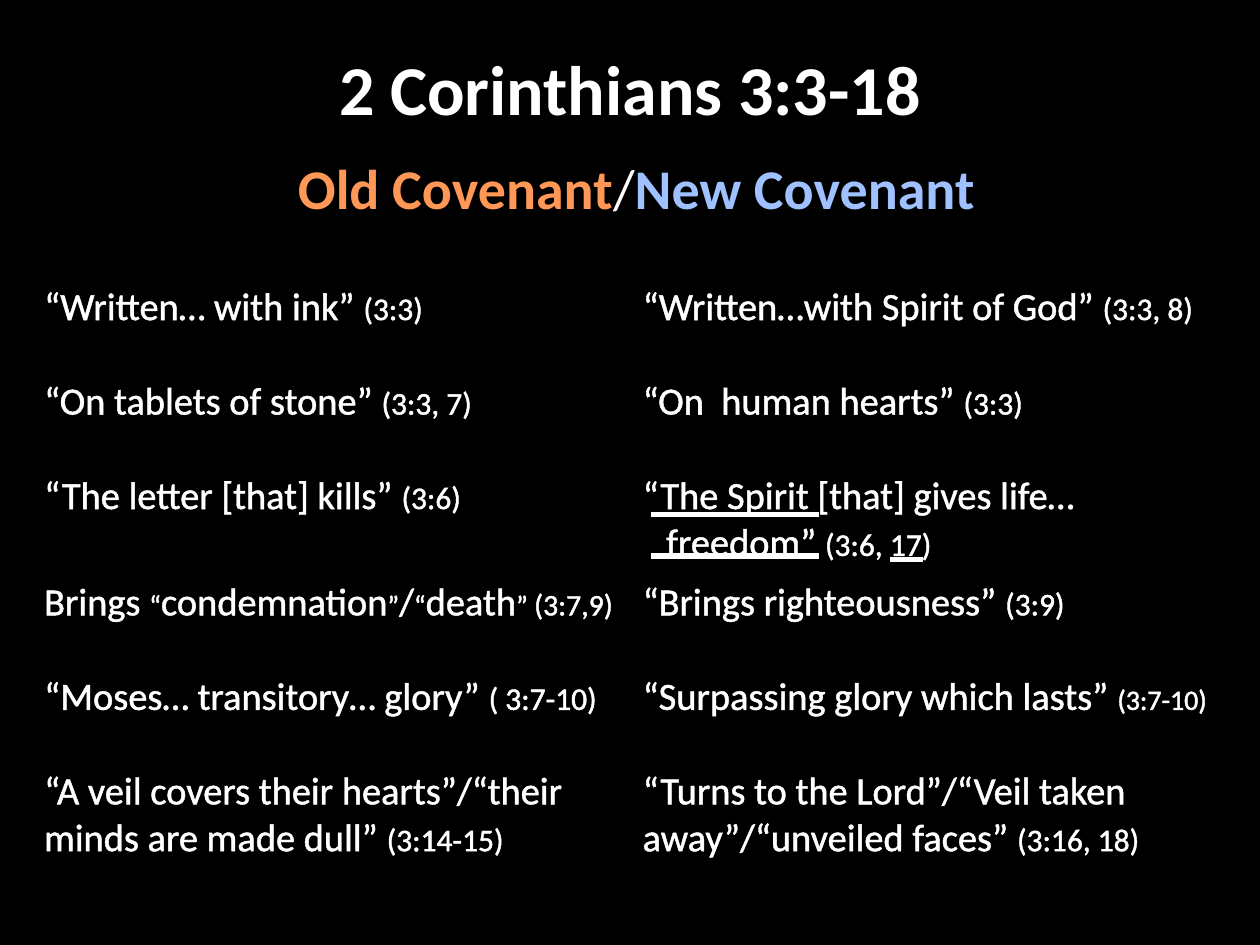
from dataclasses import dataclass

from lxml.etree import SubElement
from pptx import Presentation
from pptx.dml.color import RGBColor
from pptx.enum.shapes import MSO_CONNECTOR
from pptx.enum.text import MSO_ANCHOR, PP_ALIGN
from pptx.oxml import parse_xml
from pptx.oxml.ns import nsdecls, qn
from pptx.util import Pt


@dataclass(frozen=True)
class Theme:
    font: str = "Calibri"
    background: str = "000000"
    text: str = "FFFFFF"
    old: tuple = ((0, "9D4700"), (78, "FF9856"), (100, "FFF5F1"))
    new: tuple = ((0, "BFD3F9"), (9, "A0C1FF"), (50, "003D85"),
                  (79, "A0C1FF"), (100, "BFD3F9"))
    new_outline: str = "467AB8"
    title: int = 40
    subtitle: int = 32
    quote: int = 22
    verse: int = 18
    tight_verse: int = 17
    small: int = 16


THEME = Theme()
NO_GRID_STYLE = "{2D5ABB26-0587-4C30-8999-92F81FD0307C}"
HANGING = 13.5

# Each cell: hanging indent, then runs of text, size and optional underline
Q, V, S = THEME.quote, THEME.verse, THEME.small
ROWS = [
    ((True, [("“Written… with ink” ", Q), ("(3:3)", V)]),
     (True, [("“Written…with Spirit of God” ", Q), ("(3:3, 8)", V)])),
    ((True, [("“On tablets of stone” ", Q), ("(3:3, 7)", V)]),
     (True, [("“On  human hearts” ", Q), ("(3:3)", V)])),
    ((True, [("“The letter [that] kills” ", Q), ("(3:6)", V)]),
     (True, [("“The Spirit [that] gives life… freedom” ", Q),
             ("(3:6, ", V), ("17", V, True), (")", V)])),
    ((False, [("Brings ", Q), ("“", S), ("condemnation", Q), ("”", S), ("/", Q),
              ("“", S), ("death", Q), ("” ", S), ("(3:7,9)", THEME.tight_verse)]),
     (False, [("“Brings righteousness” ", Q), ("(3:9)", V)])),
    ((True, [("“Moses… transitory… glory” ", Q), ("( 3:7-10)", V)]),
     (True, [("“Surpassing glory which lasts” ", Q), ("(3:7-10)", S)])),
    ((False, [("“A veil covers their hearts”/“their minds are made dull” ", Q),
              ("(3:14-15)", V)]),
     (False, [("“Turns to the Lord”/“Veil taken away”/“unveiled faces” ", Q),
              ("(3:16, 18)", V)])),
]


def add_text(paragraph, text, *, size, color=THEME.text, bold=False,
             underline=False, gradient=None, outline=None, outline_width=0.75):
    """Add one formatted run to a paragraph."""
    run = paragraph.add_run()
    run.text = text
    font = run.font
    font.name, font.size, font.bold = THEME.font, Pt(size), bold
    if underline:
        font.underline = True
    properties = font._element
    if gradient:
        stops = "".join(
            f'<a:gs pos="{position * 1000}"><a:srgbClr val="{stop}"/></a:gs>'
            for position, stop in gradient)
        properties.insert(0, parse_xml(
            f'<a:gradFill {nsdecls("a")}><a:gsLst>{stops}</a:gsLst>'
            '<a:lin ang="5400000"/></a:gradFill>'))
    else:
        font.color.rgb = RGBColor.from_string(color)
    if outline:
        properties.insert(0, parse_xml(
            f'<a:ln {nsdecls("a")} w="{Pt(outline_width)}"><a:solidFill>'
            f'<a:srgbClr val="{outline}"/></a:solidFill></a:ln>'))


def place_title(slide, left, top, width, height):
    title = slide.shapes.title
    title.left, title.top, title.width, title.height = map(
        Pt, (left, top, width, height))
    frame = title.text_frame
    frame.margin_left = frame.margin_right = frame.margin_bottom = 0
    frame.margin_top = Pt(2)
    frame.vertical_anchor = MSO_ANCHOR.TOP
    paragraph = frame.paragraphs[0]
    paragraph.alignment = PP_ALIGN.CENTER
    add_text(paragraph, "2 Corinthians 3:3-18", size=THEME.title, bold=True)


def place_subtitle(slide, left, top, width, height):
    box = slide.shapes.add_textbox(*map(Pt, (left, top, width, height)))
    box.text_frame.word_wrap = True
    paragraph = box.text_frame.paragraphs[0]
    paragraph.alignment = PP_ALIGN.CENTER
    size = THEME.subtitle
    add_text(paragraph, " Old Covenant", size=size, bold=True, gradient=THEME.old)
    add_text(paragraph, "/", size=size)
    add_text(paragraph, "New Covenant", size=size, bold=True, gradient=THEME.new,
             outline=THEME.new_outline, outline_width=0.83)


def fill_cell(cell, hanging, runs):
    cell.fill.background()
    paragraph = cell.text_frame.paragraphs[0]
    if hanging:
        properties = paragraph._p.get_or_add_pPr()
        properties.set("marL", str(Pt(HANGING)))
        properties.set("indent", str(Pt(-HANGING)))
    for text, size, *underline in runs:
        add_text(paragraph, text, size=size, underline=bool(underline),
                 outline=THEME.text)


def place_comparison(slide, left, top, width, height, row_height):
    shape = slide.shapes.add_table(
        len(ROWS), 2, *map(Pt, (left, top, width, height)))
    table = shape.table
    table.first_row = table.horz_banding = False
    table._tbl.tblPr.find(qn("a:tableStyleId")).text = NO_GRID_STYLE
    for row, contents in zip(table.rows, ROWS):
        row.height = Pt(row_height)
        for cell, (hanging, runs) in zip(row.cells, contents):
            fill_cell(cell, hanging, runs)


def place_underlines(slide, left, top, width, height):
    """Rule the top and bottom edges of the box."""
    for y in (top + height, top):
        line = slide.shapes.add_connector(
            MSO_CONNECTOR.STRAIGHT, Pt(left), Pt(y), Pt(left + width), Pt(y))
        line.line.color.rgb = RGBColor.from_string(THEME.text)
        line.line.width = Pt(3)
        SubElement(line._element.spPr, qn("a:effectLst"))


def main():
    presentation = Presentation()
    presentation.slide_width, presentation.slide_height = Pt(720), Pt(540)
    slide = presentation.slides.add_slide(presentation.slide_layouts[5])
    background = slide.background.fill
    background.solid()
    background.fore_color.rgb = RGBColor.from_string(THEME.background)

    place_comparison(slide, 18, 158.4, 684, 362, row_height=54)
    place_title(slide, 36, 24, 648, 72)
    place_subtitle(slide, 36, 84, 648, 46)
    place_underlines(slide, 372, 294, 96, 23.75)
    presentation.save("out.pptx")


if __name__ == "__main__":
    main()
